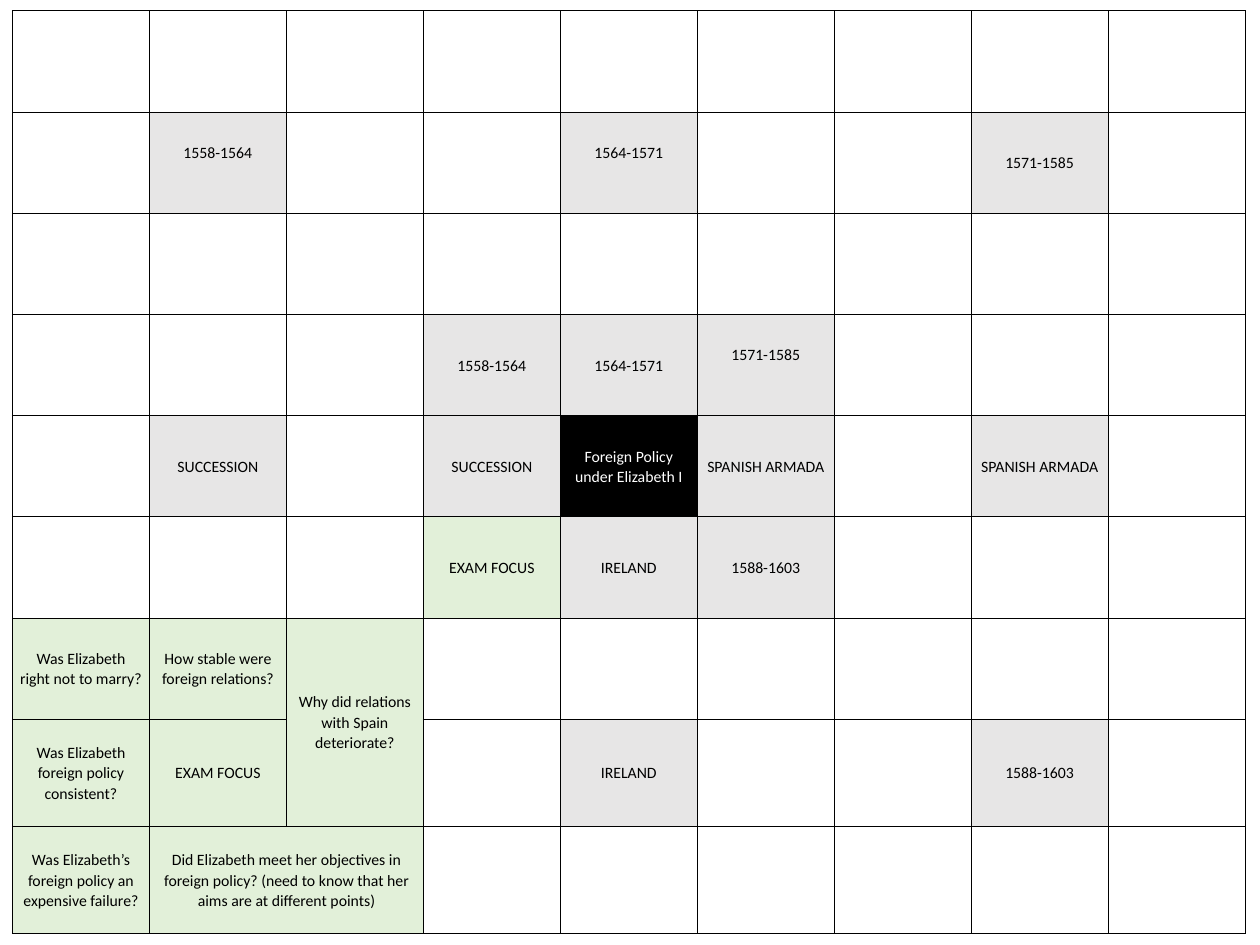
from lxml.etree import SubElement
from pptx import Presentation
from pptx.dml.color import RGBColor
from pptx.enum.text import MSO_ANCHOR as Anchor, PP_ALIGN as Align
from pptx.oxml import parse_xml
from pptx.oxml.ns import nsdecls, qn
from pptx.util import Cm, Pt

BLACK = RGBColor(0x00, 0x00, 0x00)
WHITE = RGBColor(0xFF, 0xFF, 0xFF)
GREY = RGBColor(0xE7, 0xE6, 0xE6)
GREEN = RGBColor(0xE2, 0xF0, 0xD9)

SIZE = 9
CENTRE = 4
ROW_HEIGHTS = [Cm(2.04)] * 7 + [Cm(2.16)] * 2

# Topics by their (row, column) step from the centre
TOPICS = {
    (-1, -1): "1558-1564", (-1, 0): "1564-1571", (-1, 1): "1571-1585",
    (0, -1): "SUCCESSION", (0, 1): "SPANISH ARMADA",
    (1, -1): "EXAM FOCUS", (1, 0): "IRELAND", (1, 1): "1588-1603",
}
# Exam questions by (row, column)
QUESTIONS = {
    (6, 0): "Was Elizabeth right not to marry?",
    (6, 1): "How stable were foreign relations?",
    (6, 2): "Why did relations with Spain deteriorate?",
    (7, 0): "Was Elizabeth foreign policy consistent?",
    (8, 0): "Was Elizabeth’s foreign policy an expensive failure?",
    (8, 1): "Did Elizabeth meet her objectives in foreign policy? "
            "(need to know that her aims are at different points)",
}
MERGES = [((6, 2), (7, 2)), ((8, 1), (8, 2))]
RAISED = {(1, 1), (1, 4), (3, 5)}  # labels that sit above the middle


def draw_borders(cell):
    props = cell._tc.get_or_add_tcPr()
    for index, side in enumerate(("lnL", "lnR", "lnT", "lnB")):
        line = parse_xml(f'<a:{side} {nsdecls("a")} w="{Pt(0.75)}"/>')
        fill = SubElement(line, qn("a:solidFill"))
        SubElement(fill, qn("a:srgbClr"), val=str(BLACK))
        props.insert(index, line)


def write_cell(cell, text, fill, color=BLACK, raised=False):
    cell.fill.solid()
    cell.fill.fore_color.rgb = fill
    cell.vertical_anchor = Anchor.MIDDLE
    cell.margin_left = cell.margin_right = Cm(0.15)
    cell.margin_top = 0
    cell.margin_bottom = Cm(0.41) if raised else 0
    label = cell.text_frame.paragraphs[0]
    label.alignment = Align.CENTER
    label.line_spacing = 1.07
    run = label.add_run()
    run.text = text
    run.font.name = "Calibri"
    run.font.size = Pt(9)
    run.font.color.rgb = color


def add_policy_grid(slide, left, top, width):
    grid = slide.shapes.add_table(
        SIZE, SIZE, left, top, width, sum(ROW_HEIGHTS)).table
    grid.first_row = grid.horz_banding = False
    for row, height in zip(grid.rows, ROW_HEIGHTS):
        row.height = height
    for cell in grid.iter_cells():
        cell.fill.background()
        draw_borders(cell)
    for first, last in MERGES:
        grid.cell(*first).merge(grid.cell(*last))

    # Central theme
    write_cell(grid.cell(CENTRE, CENTRE), "Foreign Policy under Elizabeth I",
               BLACK, WHITE)

    # Each topic stands next to the theme and again in the middle of its block
    for (down, across), topic in TOPICS.items():
        fill = GREEN if topic == "EXAM FOCUS" else GREY
        for step in (1, 3):
            place = (CENTRE + step * down, CENTRE + step * across)
            write_cell(grid.cell(*place), topic, fill, raised=place in RAISED)

    # Exam focus block
    for place, question in QUESTIONS.items():
        write_cell(grid.cell(*place), question, GREEN)


def main():
    deck = Presentation()
    deck.slide_width, deck.slide_height = Cm(25.4), Cm(19.05)
    slide = deck.slides.add_slide(deck.slide_layouts[6])
    add_policy_grid(slide, Cm(0.25), Cm(0.22), Cm(24.85))
    deck.save("out.pptx")


if __name__ == "__main__":
    main()
